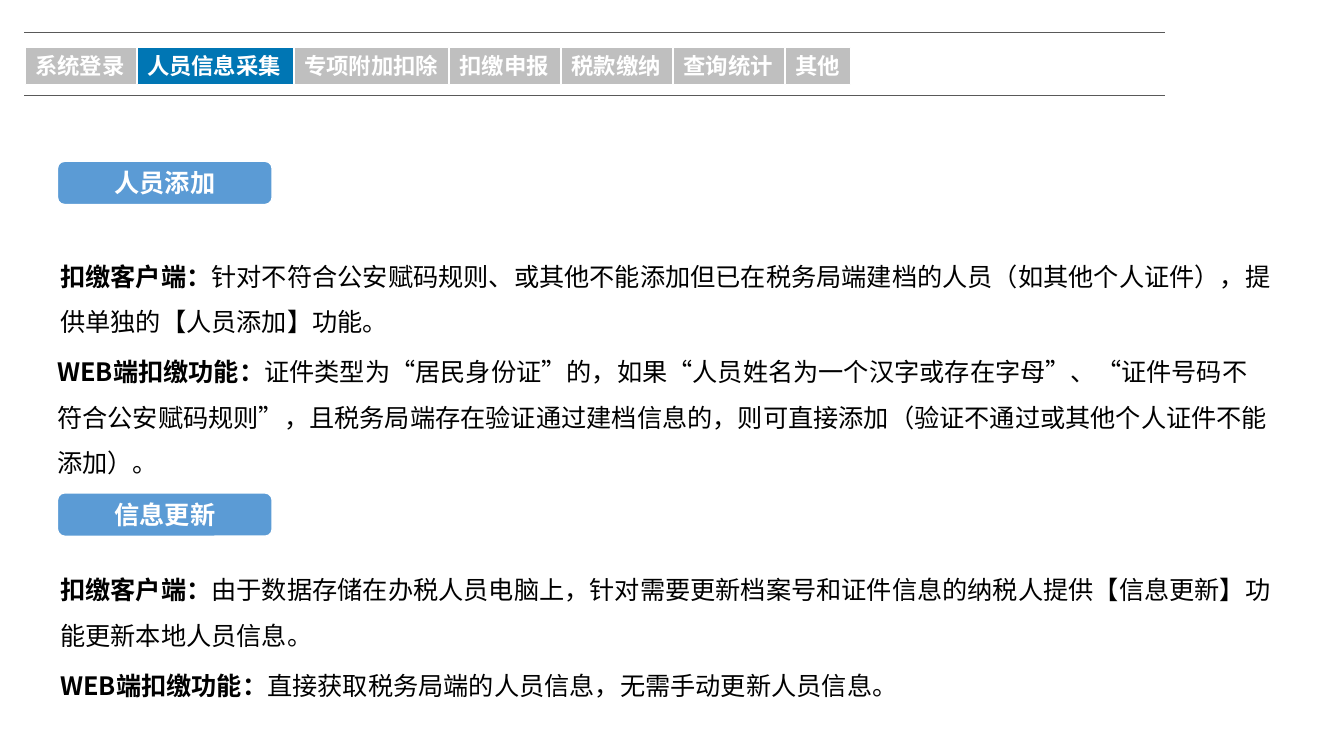
from dataclasses import dataclass

from pptx import Presentation
from pptx.dml.color import RGBColor
from pptx.enum.shapes import MSO_CONNECTOR, MSO_SHAPE
from pptx.enum.text import MSO_ANCHOR, PP_ALIGN
from pptx.oxml.ns import qn
from pptx.shapes.autoshape import Shape
from pptx.slide import Slide
from pptx.text.text import _Run as Run
from pptx.util import Inches, Pt

WHITE = RGBColor(0xFF, 0xFF, 0xFF)
BLACK = RGBColor(0x00, 0x00, 0x00)
RULE_GREY = RGBColor(0x59, 0x59, 0x59)
TAB_GREY = RGBColor(0xBF, 0xBF, 0xBF)
ACTIVE_BLUE = RGBColor(0x00, 0x76, 0xB4)
BADGE_BLUE = RGBColor(0x5B, 0x9B, 0xD5)
HAN_FONT = "Noto Sans CJK SC"
LATIN_FONT = "Calibri"
TAB_LEFT, TAB_GAP = 0.25, 0.01


@dataclass
class Tab:
    label: str
    width: float = 1.1
    active: bool = False


@dataclass
class Badge:
    label: str
    top: float


@dataclass
class Span:
    text: str
    font: str = LATIN_FONT
    bold: bool = False


@dataclass
class Passage:
    left: float
    top: float
    width: float
    height: float
    spans: list[Span]


TABS = [
    Tab("系统登录"),
    Tab("人员信息采集", 1.55, active=True),
    Tab("专项附加扣除", 1.53),
    Tab("扣缴申报"),
    Tab("税款缴纳"),
    Tab("查询统计"),
    Tab("其他", 0.65),
]
BADGES = [Badge("人员添加", 1.6), Badge("信息更新", 4.89)]
CLIENT = Span("扣缴客户端：", bold=True)
WEB = Span("WEB端扣缴功能：", HAN_FONT, bold=True)
PASSAGES = [
    Passage(0.5, 2.39, 12.22, 1.01, [
        CLIENT,
        Span("针对不符合公安赋码规则、"),
        Span("或其他不能添加但已在税务局端建档的人员（如其他个人证件），", HAN_FONT),
        Span("提供单独的【人员添加】功能。"),
    ]),
    Passage(0.47, 3.34, 12.24, 1.46, [
        WEB,
        Span("证件类型为“居民身份证”的，如果“人员姓名为一个汉字或存在字母”、"
             "“证件号码不符合公安赋码规则”，且税务局端存在验证通过建档信息的，"
             "则可直接添加（验证不通过或其他个人证件不能添加）。", HAN_FONT),
    ]),
    Passage(0.5, 5.5, 12.22, 1.01, [
        CLIENT,
        Span("由于数据存储在办税人员电脑上，针对需要更新档案号和证件信息的纳税人"
             "提供【信息更新】功能更新本地人员信息。"),
    ]),
    Passage(0.5, 6.45, 11.73, 0.55, [
        WEB,
        Span("直接获取税务局端的人员信息，无需手动更新人员信息。"),
    ]),
]


def style_run(run: Run, size: float, color: RGBColor, bold: bool, font: str = HAN_FONT) -> None:
    """Format a run, always using the Han font for its Chinese characters."""
    run.font.size = Pt(size)
    run.font.bold = bold
    run.font.color.rgb = color
    run.font.name = font
    properties = run.font._element
    properties.set("lang", "zh-CN")
    east_asian = properties.makeelement(qn("a:ea"), {"typeface": HAN_FONT})
    properties.find(qn("a:latin")).addnext(east_asian)


def add_rule(page: Slide, top: float) -> None:
    rule = page.shapes.add_connector(
        MSO_CONNECTOR.STRAIGHT, Inches(0.24), Inches(top), Inches(11.55), Inches(top))
    rule.line.color.rgb = RULE_GREY
    rule.line.width = Pt(0.5)
    properties = rule._element.spPr
    properties.append(properties.makeelement(qn("a:effectLst"), {}))


def style_label(shape: Shape, label: str, size: float, fill: RGBColor,
                line_width: float, alignment: PP_ALIGN) -> None:
    shape.shadow.inherit = False
    shape.fill.solid()
    shape.fill.fore_color.rgb = fill
    shape.line.color.rgb = WHITE
    shape.line.width = Pt(line_width)
    frame = shape.text_frame
    frame.text = label
    frame.vertical_anchor = MSO_ANCHOR.MIDDLE
    para = frame.paragraphs[0]
    para.alignment = alignment
    style_run(para.runs[0], size, WHITE, bold=True)


def add_tabs(page: Slide, tabs: list[Tab]) -> None:
    left = TAB_LEFT
    for tab in tabs:
        box = page.shapes.add_shape(
            MSO_SHAPE.RECTANGLE, Inches(left), Inches(0.47), Inches(tab.width), Inches(0.37))
        fill = ACTIVE_BLUE if tab.active else TAB_GREY
        style_label(box, tab.label, 16, fill, 0.75, PP_ALIGN.LEFT)
        box.text_frame.word_wrap = False
        left += tab.width + TAB_GAP


def add_badge(page: Slide, badge: Badge) -> None:
    box = page.shapes.add_shape(
        MSO_SHAPE.ROUNDED_RECTANGLE, Inches(0.57), Inches(badge.top), Inches(2.13), Inches(0.43))
    style_label(box, badge.label, 18, BADGE_BLUE, 1, PP_ALIGN.CENTER)


def add_passage(page: Slide, passage: Passage) -> None:
    box = page.shapes.add_textbox(
        Inches(passage.left), Inches(passage.top), Inches(passage.width), Inches(passage.height))
    box.text_frame.word_wrap = True
    para = box.text_frame.paragraphs[0]
    para.line_spacing = 1.5
    for span in passage.spans:
        run = para.add_run()
        run.text = span.text
        style_run(run, 18, BLACK, span.bold, span.font)


def main() -> None:
    deck = Presentation()
    deck.slide_width, deck.slide_height = Inches(13.33), Inches(7.5)
    page = deck.slides.add_slide(deck.slide_layouts[6])
    for top in (0.32, 0.95):
        add_rule(page, top)
    add_tabs(page, TABS)
    for badge in BADGES:
        add_badge(page, badge)
    for passage in PASSAGES:
        add_passage(page, passage)
    deck.save("out.pptx")


if __name__ == "__main__":
    main()
